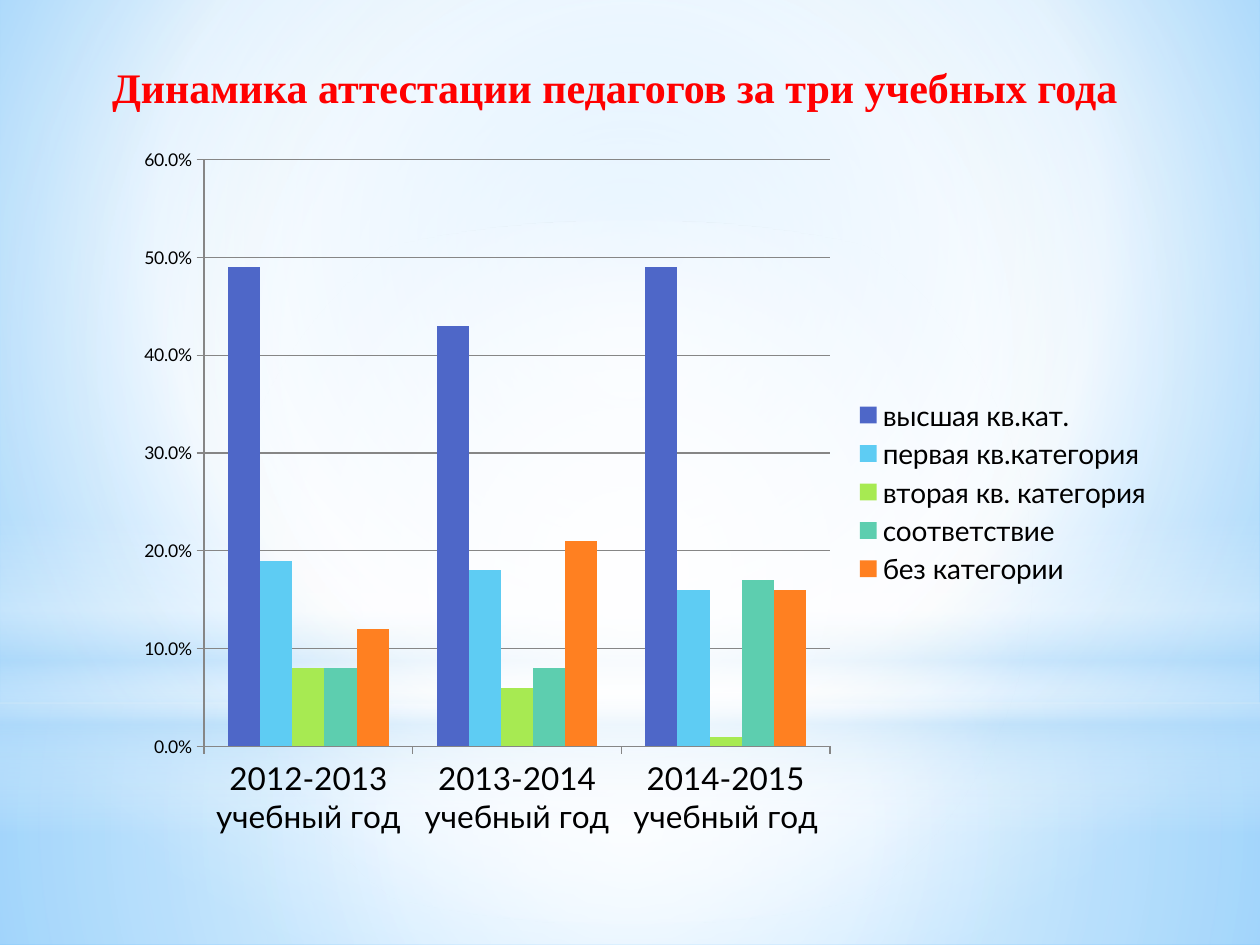
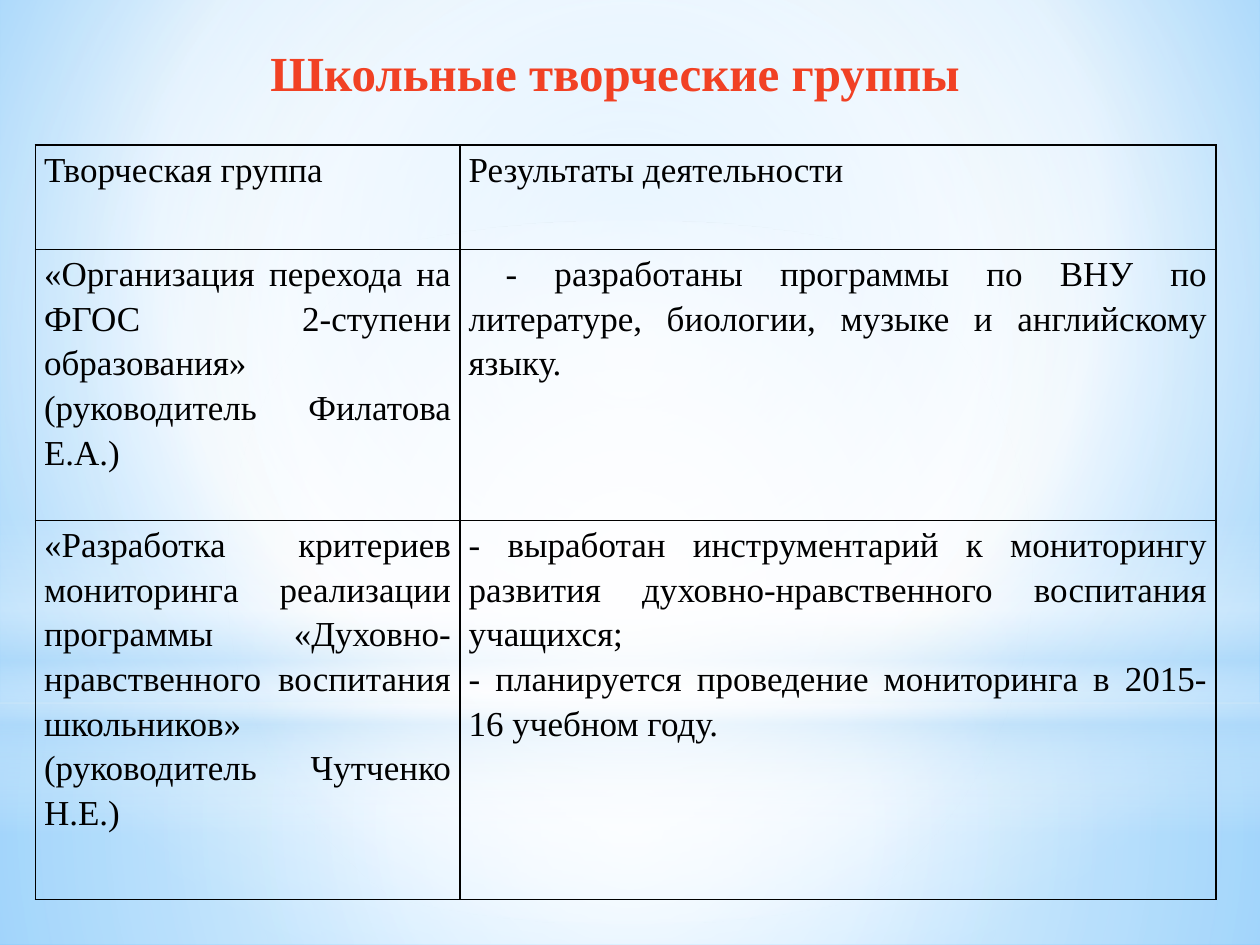
from pptx import Presentation
from pptx.chart.data import CategoryChartData
from pptx.dml.color import RGBColor
from pptx.enum.chart import XL_CHART_TYPE, XL_LEGEND_POSITION, XL_TICK_MARK
from pptx.enum.shapes import MSO_SHAPE
from pptx.enum.text import MSO_ANCHOR, MSO_AUTO_SIZE, PP_ALIGN
from pptx.oxml import parse_xml
from pptx.oxml.ns import nsdecls, qn
from pptx.util import Inches, Pt

RECTANGLE, ELLIPSE = MSO_SHAPE.RECTANGLE, MSO_SHAPE.OVAL
CENTER, JUSTIFY = PP_ALIGN.CENTER, PP_ALIGN.JUSTIFY
TOP = MSO_ANCHOR.TOP
FIT_SHAPE = MSO_AUTO_SIZE.SHAPE_TO_FIT_TEXT
TICK_OUT = XL_TICK_MARK.OUTSIDE
CLUSTERED = XL_CHART_TYPE.COLUMN_CLUSTERED
LEGEND_RIGHT = XL_LEGEND_POSITION.RIGHT

SERIF, SANS = "Times New Roman", "Lato"
BLACK, GRAY, RED, ORANGE_RED = "000000", "868686", "FF0000", "F14124"
WHITE, PALE_BLUE = "FFFFFF", "B4DCFA"

# Gradient stops: position %, colour, opacity %
BACKGROUND_STOPS = [(0, "9ED5FF", 100), (60, WHITE, 100), (100, "5BB9FF", 100)]
BACKGROUND_FOCUS = (20, 10, 20, 60)
CENTER_FOCUS = (50, 50, 50, 50)

# Backdrop: preset, place, stops, focus (None for a vertical gradient)
BACKDROP = [
    (RECTANGLE, (0, 5.58, 10, 1.92),
     [(0, WHITE, 91), (37, WHITE, 76), (100, PALE_BLUE, 79)], CENTER_FOCUS),
    (RECTANGLE, (0, 0, 10, 5.58),
     [(0, WHITE, 89), (48, WHITE, 62), (100, PALE_BLUE, 79)], CENTER_FOCUS),
    (RECTANGLE, (0, 4.12, 10, 2.5),
     [(0, WHITE, 0), (29, WHITE, 30), (45, PALE_BLUE, 40), (55, WHITE, 26),
      (65, PALE_BLUE, 60), (100, WHITE, 0)], None),
    (ELLIPSE, (0, 1.75, 10, 5.58),
     [(0, WHITE, 100), (56, WHITE, 0)], CENTER_FOCUS),
]

CHART_TITLE = "Динамика аттестации педагогов за три учебных года"
SCHOOL_YEARS = ["2012-2013 учебный год", "2013-2014 учебный год", "2014-2015 учебный год"]
CATEGORY_SHARES = [
    ("высшая кв.кат.", "4E67C8", (0.49, 0.43, 0.49)),
    ("первая кв.категория", "5ECCF3", (0.19, 0.18, 0.16)),
    ("вторая кв. категория", "A7EA52", (0.08, 0.06, 0.01)),
    ("соответствие", "5DCEAF", (0.08, 0.08, 0.17)),
    ("без категории", "FF8021", (0.12, 0.21, 0.16)),
]

GROUPS_TITLE = "Школьные творческие группы"
COLUMN_WIDTHS = [3.37, 6]
ROW_HEIGHTS = [0.83, 2.15, 3.01]
# Each cell is a list of paragraphs
GROUP_ROWS = [
    (["Творческая группа"], ["Результаты деятельности"]),
    (["«Организация перехода на ФГОС 2-ступени образования» (руководитель Филатова Е.А.)"],
     [" - разработаны программы по ВНУ по литературе, биологии, музыке и английскому языку."]),
    (["«Разработка критериев мониторинга реализации программы "
      "«Духовно-нравственного воспитания школьников» (руководитель Чутченко Н.Е.)"],
     ["- выработан инструментарий к мониторингу развития "
      "духовно-нравственного воспитания учащихся;",
      "- планируется проведение мониторинга в 2015-16 учебном году."]),
]


def color(code):
    return RGBColor.from_string(code)


def inches(place):
    return [Inches(length) for length in place]


def style_font(font, size, name, code, bold=False):
    font.size, font.name, font.bold = Pt(size), name, bold
    font.color.rgb = color(code)


def paint_gradient(properties, stops, focus):
    """Swap the solid fill in properties for a gradient."""
    stop_xml = "".join(
        f'<a:gs pos="{position * 1000}"><a:srgbClr val="{code}">'
        f'<a:alpha val="{opacity * 1000}"/></a:srgbClr></a:gs>'
        for position, code, opacity in stops)
    if focus:
        sides = " ".join(f'{side}="{share * 1000}"' for side, share in zip("ltrb", focus))
        direction = f'<a:path path="circle"><a:fillToRect {sides}/></a:path>'
    else:
        direction = '<a:lin ang="5400000" scaled="0"/>'
    gradient = parse_xml(f'<a:gradFill {nsdecls("a")} rotWithShape="1">'
                         f'<a:gsLst>{stop_xml}</a:gsLst>{direction}</a:gradFill>')
    properties.replace(properties.find(qn("a:solidFill")), gradient)


def build_backdrop(deck, page):
    """Draw the shared backdrop through page and move it to the slide master."""
    master = deck.slide_master
    master.background.fill.solid()
    master.background.fill.fore_color.rgb = color(WHITE)
    paint_gradient(next(master.element.iter(qn("p:bgPr"))), BACKGROUND_STOPS, BACKGROUND_FOCUS)
    tree = next(master.element.iter(qn("p:spTree")))
    for number, (preset, place, stops, focus) in enumerate(BACKDROP):
        shape = page.shapes.add_shape(preset, *inches(place))
        shape.shadow.inherit = False
        shape.line.fill.background()
        shape.fill.solid()
        shape.fill.fore_color.rgb = color(WHITE)
        paint_gradient(shape.element.spPr, stops, focus)
        shape.name = f"Backdrop {number + 1}"
        next(shape.element.iter(qn("p:cNvPr"))).set("id", str(100 + number))
        tree.insert(2 + number, shape.element)


def set_title(page, text, place, size, code):
    title = page.shapes.title
    title.left, title.top, title.width, title.height = inches(place)
    frame = title.text_frame
    frame.word_wrap = True
    frame.auto_size = FIT_SHAPE
    frame.vertical_anchor = TOP
    para = frame.paragraphs[0]
    para.alignment = CENTER
    span = para.add_run()
    span.text = text
    style_font(span.font, size, SERIF, code, bold=True)


def add_shares_chart(page, place):
    data = CategoryChartData(number_format="0.0%")
    data.categories = SCHOOL_YEARS
    for name, _, values in CATEGORY_SHARES:
        data.add_series(name, values)
    chart = page.shapes.add_chart(CLUSTERED, *inches(place), data).chart
    chart.has_title = False
    style_font(chart.font, 10, SANS, BLACK)

    plot = chart.plots[0]
    plot.gap_width, plot.overlap = 150, 0
    plot.vary_by_categories = False
    for series, (_, code, _) in zip(plot.series, CATEGORY_SHARES):
        series.format.fill.solid()
        series.format.fill.fore_color.rgb = color(code)

    years, shares = chart.category_axis, chart.value_axis
    shares.minimum_scale, shares.maximum_scale, shares.major_unit = 0, 0.6, 0.1
    shares.has_major_gridlines = True
    shares.tick_labels.number_format = "0.0%"
    shares.tick_labels.number_format_is_linked = False
    style_font(years.tick_labels.font, 18, SANS, BLACK)
    for axis in (years, shares):
        axis.major_tick_mark = TICK_OUT
    for lines in (years, shares, shares.major_gridlines):
        lines.format.line.color.rgb = color(GRAY)
        lines.format.line.width = Pt(0.75)

    chart.has_legend = True
    chart.legend.position = LEGEND_RIGHT
    chart.legend.include_in_layout = False
    style_font(chart.legend.font, 16, SANS, BLACK)


def fill_cell(cell, texts):
    cell.fill.background()
    cell.margin_left = cell.margin_right = Inches(0.07)
    cell.margin_top = cell.margin_bottom = 0
    cell.vertical_anchor = TOP
    frame = cell.text_frame
    for index, text in enumerate(texts):
        para = frame.add_paragraph() if index else frame.paragraphs[0]
        para.alignment, para.line_spacing = JUSTIFY, 1.15
        span = para.add_run()
        span.text = text
        style_font(span.font, 20, SERIF, BLACK)


def add_borders(cell_properties):
    for index, side in enumerate("LRTB"):
        cell_properties.insert(index, parse_xml(
            f'<a:ln{side} {nsdecls("a")} w="{Pt(1)}"><a:solidFill>'
            f'<a:srgbClr val="{BLACK}"/></a:solidFill></a:ln{side}>'))


def add_groups_table(page, left, top):
    place = (left, top, sum(COLUMN_WIDTHS), sum(ROW_HEIGHTS))
    frame = page.shapes.add_table(len(ROW_HEIGHTS), len(COLUMN_WIDTHS), *inches(place))
    table = frame.table
    table.first_row = table.horz_banding = False
    for column, width in zip(table.columns, COLUMN_WIDTHS):
        column.width = Inches(width)
    for row, height, contents in zip(table.rows, ROW_HEIGHTS, GROUP_ROWS):
        row.height = Inches(height)
        for cell, texts in zip(row.cells, contents):
            fill_cell(cell, texts)
    for cell_properties in frame.element.iter(qn("a:tcPr")):
        add_borders(cell_properties)


def main():
    deck = Presentation()
    deck.slide_width, deck.slide_height = Inches(10), Inches(7.5)
    title_only = deck.slide_layouts[5]

    chart_page = deck.slides.add_slide(title_only)
    build_backdrop(deck, chart_page)
    set_title(chart_page, CHART_TITLE, (0.51, 0.44, 8.74, 0.5), 24, RED)
    add_shares_chart(chart_page, (0.98, 1.07, 8.27, 5.67))

    groups_page = deck.slides.add_slide(title_only)
    set_title(groups_page, GROUPS_TITLE, (1.61, 0.29, 6.54, 0.57), 28, ORANGE_RED)
    add_groups_table(groups_page, 0.28, 1.15)

    deck.save("out.pptx")


if __name__ == "__main__":
    main()
